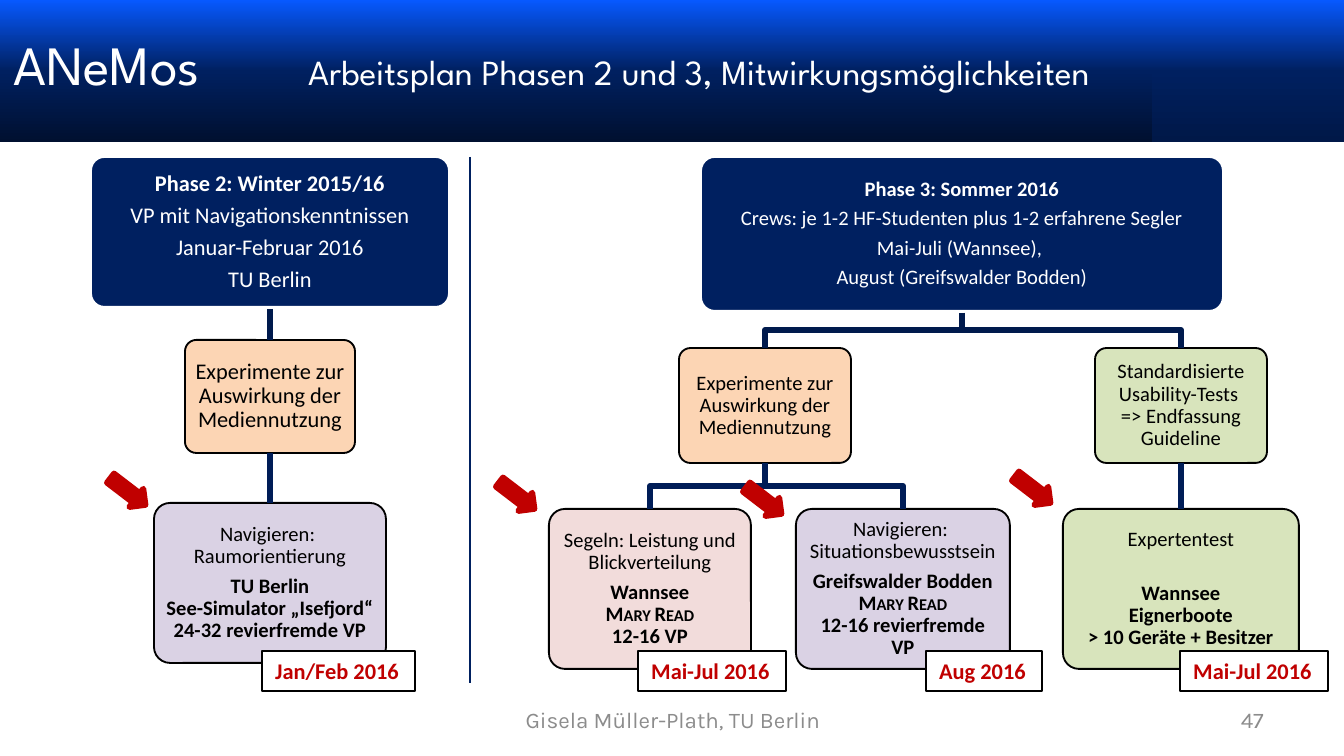
import pptx
import pptx.util
import pptx.dml.color
import pptx.enum.shapes
import pptx.enum.text
import pptx.oxml.ns
from lxml import etree

SCALE = 914400 / 134.4  # EMU in one px
HUES = {
    "navy": "002060", "deep": "001A4D", "dark": "001D57", "white": "FFFFFF",
    "black": "000000", "red": "C00000", "grey": "8C8C8C", "peach": "FCD5B4",
    "lilac": "DAD2E4", "pink": "F2DCDB", "green": "D8E4BC",
}
KIND = pptx.enum.shapes.MSO_SHAPE
LINK = pptx.enum.shapes.MSO_CONNECTOR
ALIGN = pptx.enum.text.PP_ALIGN
MID = pptx.enum.text.MSO_ANCHOR.MIDDLE
qn = pptx.oxml.ns.qn
rgb = pptx.dml.color.RGBColor.from_string


def px(*nums):
    return [pptx.util.Emu(round(n * SCALE)) for n in nums]


def write(frame, paras, size, hue, align=ALIGN.CENTER, font="Calibri", space=1, gap=0):
    """Fill a frame; each paragraph is a list of (text, style), b = bold, s = small caps."""
    frame.vertical_anchor = MID
    for i, runs in enumerate(paras):
        para = frame.paragraphs[0] if i == 0 else frame.add_paragraph()
        para.alignment = align
        para.line_spacing = space
        if i:
            para.space_before = pptx.util.Pt(gap)
        for text, style in runs:
            for j, line in enumerate(text.split("\n")):
                if j:
                    para.add_line_break()
                    etree.SubElement(para._p[-1], qn("a:rPr"), sz=str(size * 100))
                if not line:
                    continue
                run = para.add_run()
                run.text = line
                run.font.name = font
                run.font.size = pptx.util.Pt(size)
                run.font.bold = style != ""
                run.font.color.rgb = rgb(HUES[hue])
                if style == "s":
                    run._r.get_or_add_rPr().set("cap", "small")


deck = pptx.Presentation()
deck.slide_width, deck.slide_height = px(1344, 756)
slide = deck.slides.add_slide(deck.slide_layouts[6])
shapes = slide.shapes

# Header bands
for left, wide, base in [(1267, 77, "001848"), (1146, 141, "001848"), (0, 1152, "001030")]:
    band = shapes.add_shape(KIND.RECTANGLE, *px(left, 0, wide, 142))
    band.shadow.inherit = False
    band.line.fill.background()
    band.fill.gradient()
    band.fill.gradient_angle = 90
    stops = band._element.spPr.find(".//" + qn("a:gsLst"))
    for stop in list(stops):
        stops.remove(stop)
    for pos, tone in [(0, base), (50, "002060"), (100, "0759FF")]:
        stop = etree.SubElement(stops, qn("a:gs"), pos=str(pos * 1000))
        etree.SubElement(stop, qn("a:srgbClr"), val=tone)

# Title, with a tab stop between its two parts
title = shapes.add_textbox(*px(0, 0, 1277, 126)).text_frame
title.word_wrap = True
title.vertical_anchor = MID
para = title.paragraphs[0]
tabs = etree.SubElement(para._p.get_or_add_pPr(), qn("a:tabLst"))
etree.SubElement(tabs, qn("a:tab"), pos=str(px(295)[0]), algn="l")
for text, size in [("ANeMos", 29.7), ("\tArbeitsplan Phasen 2 und 3, Mitwirkungsmöglichkeiten", 18.9)]:
    run = para.add_run()
    run.text = text
    run.font.name = "League Spartan"
    run.font.size = pptx.util.Pt(size)
    run.font.color.rgb = rgb(HUES["white"])

# Footer
for text, left, wide, align in [
    ("Gisela Müller-Plath, TU Berlin", 460, 426, ALIGN.CENTER),
    ("47", 964, 313, ALIGN.RIGHT),
]:
    foot = shapes.add_textbox(*px(left, 700, wide, 40)).text_frame
    foot.word_wrap = True
    write(foot, [[(text, "")]], 12, "grey", align, "Karla")

# Boxes: name, place, fill, text size, paragraph gap, paragraphs
study = [[("Experimente zur Auswirkung der Mediennutzung", "")]]
plan = [
    ("phase2", (89, 155, 362, 154), "navy", 12, 4.2, [
        [("Phase 2: Winter 2015/16", "b")],
        [("VP mit Navigationskenntnissen", "")],
        [("Januar-Februar 2016", "")],
        [("TU Berlin", "")]]),
    ("study2", (185, 340, 170, 113), "peach", 12, 0, study),
    ("room", (154, 503, 232, 160), "lilac", 11, 3.85, [
        [("Navigieren: \nRaumorientierung", "")],
        [("TU Berlin\nSee-Simulator „Isefjord“\n24-32 revierfremde VP", "b")]]),
    ("phase3", (699, 155, 526, 158), "navy", 11, 3.85, [
        [("Phase 3: Sommer 2016", "b")],
        [("Crews: je 1-2 HF-Studenten plus 1-2 erfahrene Segler", "")],
        [("Mai-Juli (Wannsee), ", "")],
        [("August (Greifswalder Bodden)", "")]]),
    ("study3", (679, 348, 172, 115), "peach", 11, 0, study),
    ("tests", (1095, 348, 172, 115), "green", 11, 0, [
        [("Standardisierte Usability-Tests \n=> Endfassung Guideline", "")]]),
    ("sail", (549, 509, 202, 160), "pink", 11, 3.85, [
        [("Segeln: Leistung und Blickverteilung", "")],
        [("Wannsee\n", "b"), ("Mary Read\n", "s"), ("12-16 VP", "b")]]),
    ("aware", (796, 509, 214, 160), "lilac", 11, 3.85, [
        [("Navigieren: \nSituationsbewusstsein", "")],
        [("Greifswalder Bodden\n", "b"), ("Mary Read\n", "s"), ("12-16 revierfremde VP", "b")]]),
    ("expert", (1063, 509, 236, 160), "green", 11, 17, [
        [("Expertentest", "")],
        [("Wannsee\nEignerboote\n> 10 Geräte + Besitzer", "b")]]),
]
boxes = {}
for name, place, fill, size, gap, paras in plan:
    head = fill == "navy"
    box = boxes[name] = shapes.add_shape(KIND.ROUNDED_RECTANGLE, *px(*place))
    box.adjustments[0] = 0.1
    box.shadow.inherit = False
    box.fill.solid()
    box.fill.fore_color.rgb = rgb(HUES[fill])
    box.line.color.rgb = rgb(HUES["white" if head else "black"])
    box.line.width = pptx.util.Pt(3.15 if head else 1)
    frame = box.text_frame
    frame.word_wrap = True
    frame.margin_left = frame.margin_right = frame.margin_top = frame.margin_bottom = px(7)[0]
    write(frame, paras, size, "white" if head else "black", space=0.9, gap=gap)

# Straight links and the divider
for start, end, hue, width in [
    ("phase2", "study2", "deep", 3.15), ("study2", "room", "dark", 3.15),
    ("tests", "expert", "dark", 3.15), (None, None, "navy", 0.9),
]:
    link = shapes.add_connector(LINK.STRAIGHT, *px(470, 157, 470, 683))
    if start:
        link.begin_connect(boxes[start], 2)
        link.end_connect(boxes[end], 0)
    link.line.color.rgb = rgb(HUES[hue])
    link.line.width = pptx.util.Pt(width)
    etree.SubElement(link._element.spPr, qn("a:effectLst"))

# Forked links
for x, top, goal, low, hue in [
    (962, 313, 765, 348, "deep"), (962, 313, 1181, 348, "deep"),
    (765, 463, 650, 509, "dark"), (765, 463, 903, 509, "dark"),
]:
    half = (top + low) // 2
    path = shapes.build_freeform(x, top, scale=SCALE)
    path.add_line_segments([(x, half), (goal, half), (goal, low)], close=False)
    fork = path.convert_to_shape()
    fork.shadow.inherit = False
    fork.fill.background()
    fork.line.color.rgb = rgb(HUES[hue])
    fork.line.width = pptx.util.Pt(3.15)

# Red arrows and date tags
for x, y, left, wide, date in [
    (106, 480, 262, 153, "Jan/Feb 2016"), (495, 484, 638, 148, "Mai-Jul 2016"),
    (742, 489, 926, 116, "Aug 2016"), (1011, 478, 1180, 148, "Mai-Jul 2016"),
]:
    arrow = shapes.add_shape(KIND.RIGHT_ARROW, *px(x, y, 44, 23))
    arrow.rotation = 37.4
    tag = shapes.add_shape(KIND.RECTANGLE, *px(left, 651, wide, 40))
    for item, fill, edge, width in [(arrow, "red", "red", 3.15), (tag, "white", "black", 0.75)]:
        item.shadow.inherit = False
        item.fill.solid()
        item.fill.fore_color.rgb = rgb(HUES[fill])
        item.line.color.rgb = rgb(HUES[edge])
        item.line.width = pptx.util.Pt(width)
    tag.text_frame.word_wrap = False
    write(tag.text_frame, [[(date, "b")]], 12, "red", ALIGN.LEFT)

deck.save("out.pptx")
